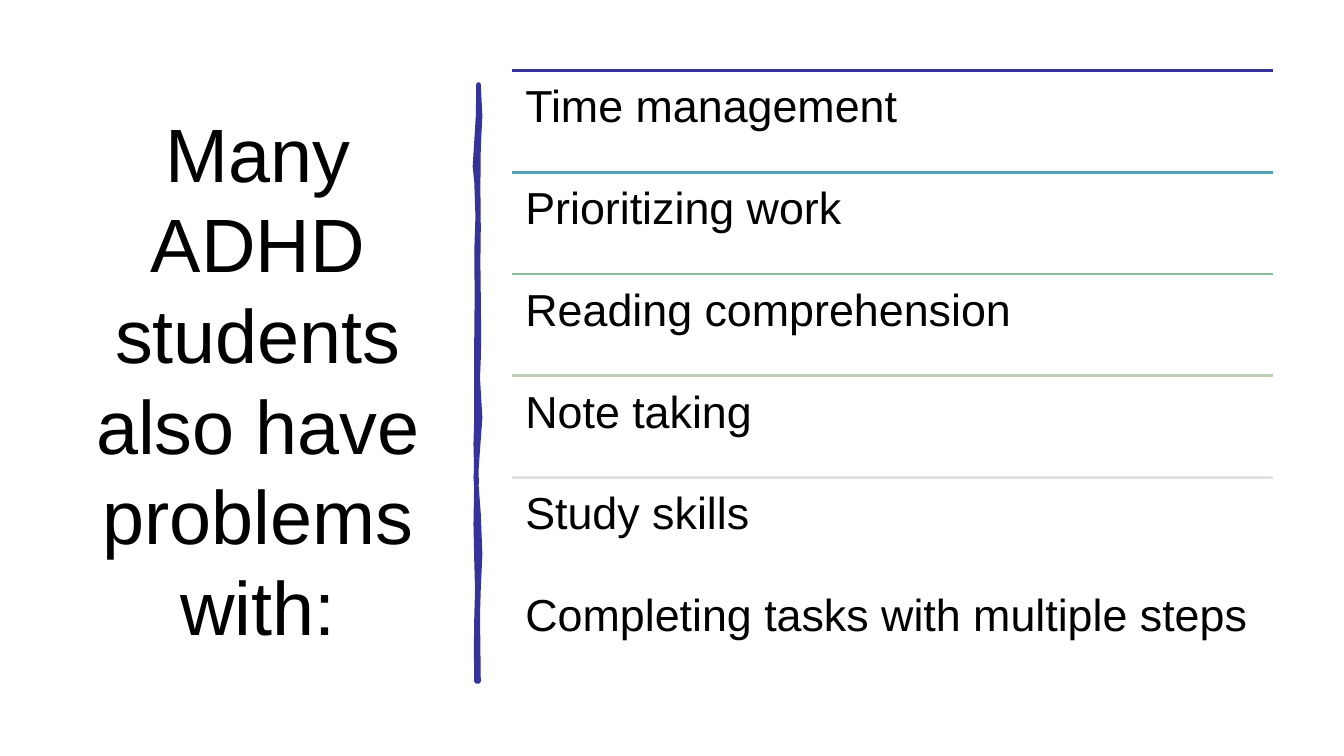
from lxml import etree
from pptx import Presentation
from pptx import util as u
from pptx.dml.color import RGBColor
from pptx.enum import shapes, text
from pptx.oxml import ns

BLACK = RGBColor(0x00, 0x00, 0x00)
INDIGO = RGBColor(0x33, 0x33, 0x99)
TEAL = RGBColor(0x54, 0xA2, 0xB6)
GREEN = RGBColor(0x88, 0xBF, 0x9E)
SAGE = RGBColor(0xBF, 0xCE, 0xB6)
STONE = RGBColor(0xE3, 0xE2, 0xDD)

PROBLEMS = [
    ("Time management", INDIGO),
    ("Prioritizing work", TEAL),
    ("Reading comprehension", GREEN),
    ("Note taking", SAGE),
    ("Study skills", STONE),
    ("Completing tasks with multiple steps", None),
]
RIGHT_EDGE = [(5, 0), (9, 79), (5, 157), (4, 259), (5, 361), (4, 447),
              (5, 533), (6, 640), (5, 691), (3, 740), (9, 840), (5, 894),
              (-2, 990), (5, 1082), (9, 1184), (5, 1270), (3, 1336), (5, 1504)]
LEFT_EDGE = [(0, 1504), (-1, 1420), (0, 1344), (2, 1272), (0, 1201),
             (-2, 1107), (0, 998), (-2, 904), (0, 841), (0, 638), (1, 530),
             (0, 422), (3, 333), (0, 246), (-4, 206), (4, 79)]


def style_text(para, size):
    """Set the font, size and colour of every run in a paragraph."""
    for span in para.runs:
        span.font.name = "Arial"
        span.font.size = u.Pt(size)
        span.font.color.rgb = BLACK


def add_title(page, left, top, width, height):
    """Fill the title placeholder and fit it to the given box."""
    title = page.shapes.title
    title.left, title.top, title.width, title.height = left, top, width, height
    frame = title.text_frame
    frame.text = "Many ADHD students also have problems with:"
    frame.word_wrap = True
    frame.auto_size = text.MSO_AUTO_SIZE.NONE
    frame.vertical_anchor = text.MSO_ANCHOR.MIDDLE
    para = frame.paragraphs[0]
    para.alignment = text.PP_ALIGN.CENTER
    style_text(para, 54)


def add_brush_stroke(page, left, top):
    """Draw the wavy vertical divider from its top left corner."""
    step = u.Cm(0.01)
    points = [(left / step + across, top / step + down)
              for across, down in RIGHT_EDGE + LEFT_EDGE]
    builder = page.shapes.build_freeform(*points[0], scale=step)
    builder.add_line_segments(points[1:], close=True)
    stroke = builder.convert_to_shape()
    stroke.shadow.inherit = False
    stroke.fill.solid()
    stroke.fill.fore_color.rgb = INDIGO
    stroke.line.color.rgb = INDIGO
    stroke.line.width = u.Pt(3.25)
    etree.SubElement(stroke.line._get_or_add_ln(), ns.qn("a:round"))


def add_rule(group, left, top, width, color):
    """Draw one horizontal rule."""
    rule = group.shapes.add_connector(
        shapes.MSO_CONNECTOR.STRAIGHT, left, top, left + width, top)
    rule.line.color.rgb = color
    rule.line.width = u.Pt(2)
    etree.SubElement(rule._element.spPr, ns.qn("a:effectLst"))


def add_problem_list(page, left, top, width, height):
    """Stack the problems in equal rows, each under its rule."""
    group = page.shapes.add_group_shape()
    row_height = height // len(PROBLEMS)
    for index, (problem, color) in enumerate(PROBLEMS):
        row_top = top + index * row_height
        if color is not None:
            add_rule(group, left, row_top, width, color)
        box = group.shapes.add_textbox(left, row_top, width, row_height)
        frame = box.text_frame
        frame.word_wrap = True
        frame.margin_left = frame.margin_right = u.Cm(0.34)
        frame.margin_top = frame.margin_bottom = u.Cm(0.34)
        frame.text = problem
        para = frame.paragraphs[0]
        para.line_spacing = 0.9
        style_text(para, 32)


def main():
    """Build the slide and save the deck."""
    deck = Presentation()
    deck.slide_width, deck.slide_height = u.Cm(33.87), u.Cm(19.05)
    page = deck.slides.add_slide(deck.slide_layouts[5])
    add_title(page, u.Cm(1.75), u.Cm(1.78), u.Cm(9.5), u.Cm(15.52))
    add_brush_stroke(page, u.Cm(12.01), u.Cm(2.13))
    add_problem_list(page, u.Cm(12.9), u.Cm(1.78), u.Cm(19.18), u.Cm(15.38))
    deck.save("out.pptx")


if __name__ == "__main__":
    main()
